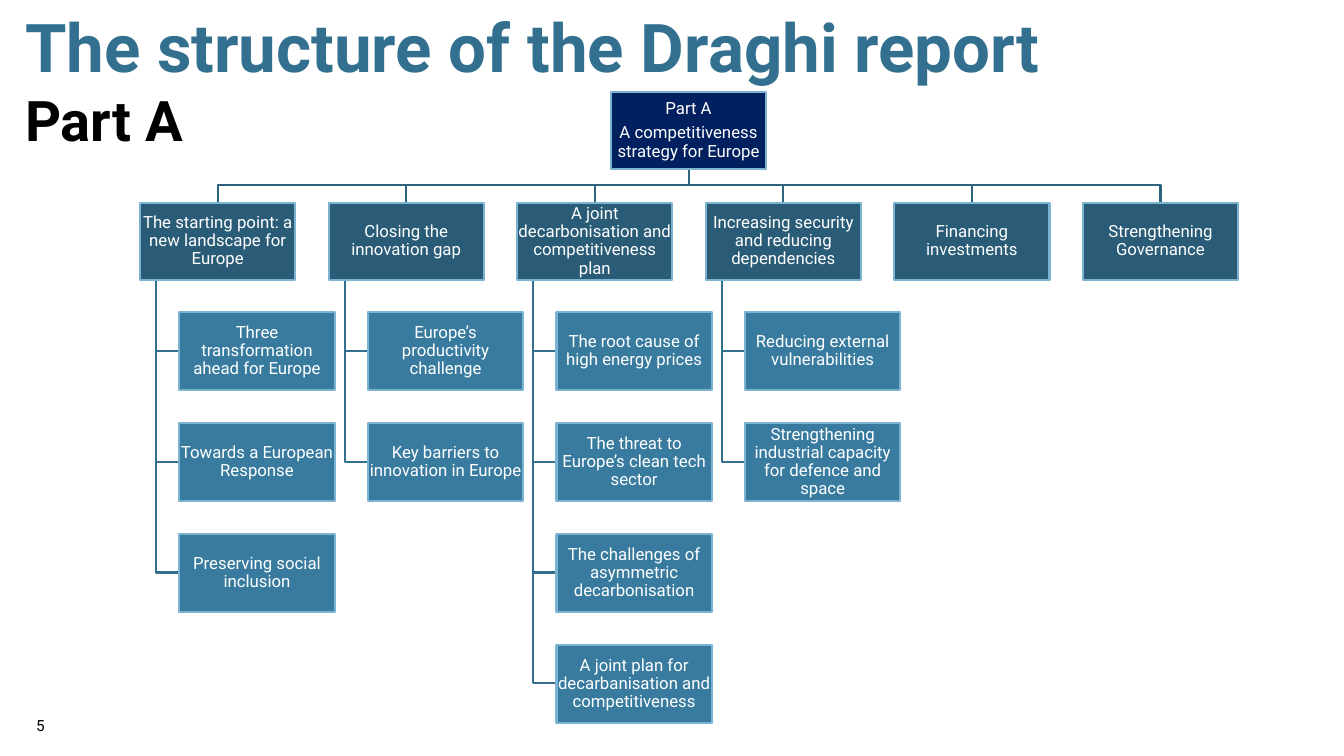
from pptx import Presentation
from pptx.dml.color import RGBColor
from pptx.enum.shapes import MSO_SHAPE as Shape
from pptx.enum.text import MSO_ANCHOR as Anchor, MSO_AUTO_SIZE as AutoSize, PP_ALIGN as Align
from pptx.util import Pt

PX = 9144
COLORS = {
    "title": "337090", "black": "000000", "white": "FFFFFF", "border": "7CB3D0",
    "root": "002060", "chapter": "2A5C77", "section": "387B9F",
    "chapter_line": "2D637F", "section_line": "337090",
}
BOX_WIDTH, BOX_HEIGHT = 154, 77
ROOT_LEFT, ROOT_TOP = 606, 91
CHAPTER_LEFT, CHAPTER_TOP, CHAPTER_PITCH = 139, 201, 187
SECTION_TOP, SECTION_PITCH, SECTION_INDENT = 310, 110, 39
BRANCH_INDENT, BUS_TOP = 16, 184
ROOT = "Part A\nA competitiveness strategy for Europe"
CHAPTERS = [
    ("The starting point: a new landscape for Europe", [
        "Three transformation ahead for Europe",
        "Towards a European Response",
        "Preserving social inclusion"]),
    ("Closing the innovation gap", [
        "Europe’s productivity challenge",
        "Key barriers to innovation in Europe"]),
    ("A joint decarbonisation and competitiveness plan", [
        "The root cause of high energy prices",
        "The threat to Europe’s clean tech sector",
        "The challenges of asymmetric decarbonisation",
        "A joint plan for decarbanisation and competitiveness"]),
    ("Increasing security and reducing dependencies", [
        "Reducing external vulnerabilities",
        "Strengthening industrial capacity for defence and space"]),
    ("Financing investments", []),
    ("Strengthening Governance", []),
]


def color(name):
    """Return the named colour."""
    return RGBColor.from_string(COLORS[name])


def style_font(paragraph, size, color_name, bold=False):
    """Format every run of a paragraph."""
    for run in paragraph.runs:
        run.font.name = "Roboto"
        run.font.size = Pt(size)
        run.font.bold = bold
        run.font.color.rgb = color(color_name)


def add_text(slide, left, top, width, height, lines):
    """Add a text box from (text, size, colour, bold) lines."""
    box = slide.shapes.add_textbox(left * PX, top * PX, width * PX, height * PX)
    frame = box.text_frame
    frame.text = "\n".join(line[0] for line in lines)
    frame.word_wrap = True
    frame.auto_size = AutoSize.SHAPE_TO_FIT_TEXT
    for paragraph, (_, size, color_name, bold) in zip(frame.paragraphs, lines):
        style_font(paragraph, size, color_name, bold)


def add_box(slide, left, top, text, fill):
    """Add one box of the chart with its centred text."""
    shape = slide.shapes.add_shape(
        Shape.RECTANGLE, left * PX, top * PX, BOX_WIDTH * PX, BOX_HEIGHT * PX)
    shape.shadow.inherit = False
    shape.fill.solid()
    shape.fill.fore_color.rgb = color(fill)
    shape.line.color.rgb = color("border")
    shape.line.width = Pt(1.5)
    frame = shape.text_frame
    frame.text = text
    frame.word_wrap = True
    frame.vertical_anchor = Anchor.MIDDLE
    frame.margin_left = frame.margin_right = frame.margin_top = frame.margin_bottom = PX
    for paragraph in frame.paragraphs:
        paragraph.alignment = Align.CENTER
        paragraph.line_spacing = 0.9
        paragraph.space_after = Pt(4.2)
        style_font(paragraph, 12, "white")


def add_elbow(slide, points, line):
    """Add an open angled line through the points."""
    builder = slide.shapes.build_freeform(*points[0], scale=PX)
    builder.add_line_segments(points[1:], close=False)
    shape = builder.convert_to_shape()
    shape.shadow.inherit = False
    shape.fill.background()
    shape.line.color.rgb = color(line)
    shape.line.width = Pt(1.5)


def add_lines(slide):
    """Join the root to its chapters and the chapters to their sections."""
    root_center = ROOT_LEFT + BOX_WIDTH // 2
    for column, (_, sections) in enumerate(CHAPTERS):
        left = CHAPTER_LEFT + column * CHAPTER_PITCH
        center, branch = left + BOX_WIDTH // 2, left + BRANCH_INDENT
        add_elbow(slide, [(root_center, ROOT_TOP + BOX_HEIGHT), (root_center, BUS_TOP),
                          (center, BUS_TOP), (center, CHAPTER_TOP)], "chapter_line")
        for row in range(len(sections)):
            middle = SECTION_TOP + row * SECTION_PITCH + BOX_HEIGHT // 2
            add_elbow(slide, [(branch, CHAPTER_TOP + BOX_HEIGHT), (branch, middle),
                              (left + SECTION_INDENT, middle)], "section_line")


def add_boxes(slide):
    """Add the root, chapter and section boxes."""
    add_box(slide, ROOT_LEFT, ROOT_TOP, ROOT, "root")
    for column, (chapter, sections) in enumerate(CHAPTERS):
        left = CHAPTER_LEFT + column * CHAPTER_PITCH
        add_box(slide, left, CHAPTER_TOP, chapter, "chapter")
        for row, section in enumerate(sections):
            add_box(slide, left + SECTION_INDENT, SECTION_TOP + row * SECTION_PITCH,
                    section, "section")


def main():
    """Build and save the slide."""
    presentation = Presentation()
    presentation.slide_width = 1333 * PX
    presentation.slide_height = 750 * PX
    slide = presentation.slides.add_slide(presentation.slide_layouts[6])
    add_text(slide, 15, 0, 1228, 158, [
        ("The structure of the Draghi report", 48, "title", True),
        ("Part A", 40, "black", True)])
    add_lines(slide)
    add_boxes(slide)
    add_text(slide, 26, 706, 72, 29, [("5", 11, "black", False)])
    presentation.save("out.pptx")


if __name__ == "__main__":
    main()
